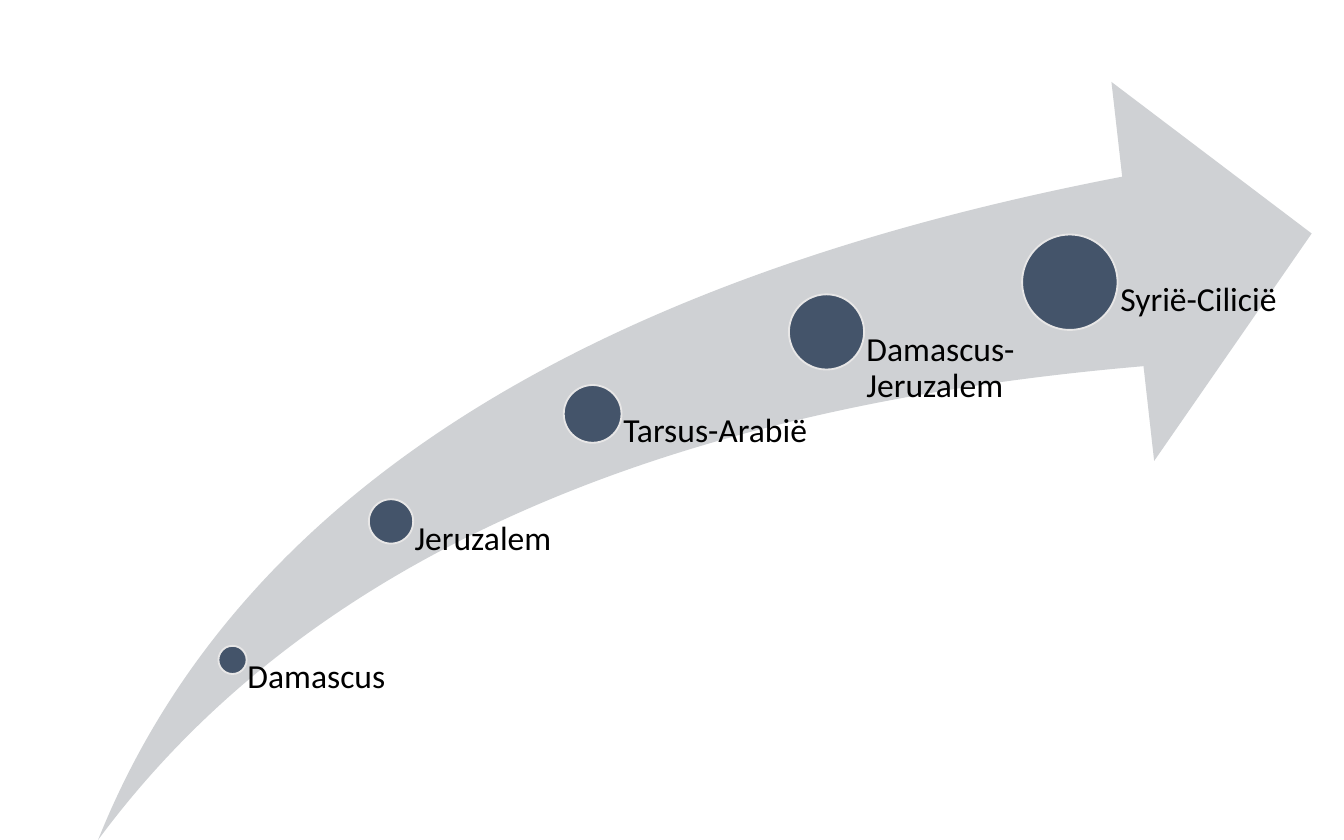
"""Build the slide of an upward journey arrow with five growing stops."""
from pptx import Presentation
from pptx import util as u
from pptx.dml import color
from pptx.enum import shapes, text

COLORS = {"arrow": "CFD1D4", "stop": "44546A", "rim": "E7E6E6", "label": "000000"}
LABEL_FRAME = {
    "word_wrap": True,
    "auto_size": text.MSO_AUTO_SIZE.NONE,
    "vertical_anchor": text.MSO_ANCHOR.TOP,
    "margin_top": 0,
    "margin_right": 0,
    "margin_bottom": 0,
}
LABEL_PARAGRAPH = {"alignment": text.PP_ALIGN.LEFT, "line_spacing": 0.9}
LABEL_FONT = {"name": "Calibri", "size": u.Pt(18)}
INSET_RATIO = 0.53
STOPS = [
    ("Damascus", 1.0, 4.3, 0.21, 1.18),
    ("Jeruzalem", 2.18, 3.27, 0.33, 1.5),
    ("Tarsus-Arabië", 3.68, 2.47, 0.43, 1.74),
    ("Damascus-Jeruzalem", 5.42, 1.86, 0.56, 1.81),
    ("Syrië-Cilicië", 7.23, 1.49, 0.71, 1.81),
]


def apply(target, values):
    """Set each named attribute on the target."""
    for name, value in values.items():
        setattr(target, name, value)


def rgb(name):
    """Return the named palette colour."""
    return color.RGBColor.from_string(COLORS[name])


def add_filled(group, preset, box, fill):
    """Add a flat preset shape in the given box, in inches."""
    shape = group.shapes.add_shape(preset, *map(u.Inches, box))
    shape.shadow.inherit = False
    shape.fill.solid()
    shape.fill.fore_color.rgb = rgb(fill)
    return shape


def add_arrow(group, box):
    """Fill the box with the rising arrow."""
    arrow = add_filled(group, shapes.MSO_SHAPE.SWOOSH_ARROW, box, "arrow")
    arrow.adjustments[0] = arrow.adjustments[1] = 0.25
    arrow.line.fill.background()


def add_stop(group, box, place, across, down, size, width):
    """Add a dot and a label that runs from its centre to the box bottom."""
    left, top, _, height = box
    center_x, center_y = left + across, top + down
    dot_box = (center_x - size / 2, center_y - size / 2, size, size)
    dot = add_filled(group, shapes.MSO_SHAPE.OVAL, dot_box, "stop")
    dot.line.color.rgb = rgb("rim")
    dot.line.width = u.Pt(1)

    label_box = (center_x, center_y, width, height - down)
    label = group.shapes.add_textbox(*map(u.Inches, label_box))
    frame = label.text_frame
    apply(frame, LABEL_FRAME)
    frame.margin_left = u.Inches(size * INSET_RATIO)
    paragraph = frame.paragraphs[0]
    apply(paragraph, LABEL_PARAGRAPH)
    run = paragraph.add_run()
    run.text = place
    apply(run.font, LABEL_FONT)
    run.font.color.rgb = rgb("label")


def add_journey(slide, box):
    """Place the arrow and its stops as one group in the box."""
    journey = slide.shapes.add_group_shape()
    add_arrow(journey, box)
    for stop in STOPS:
        add_stop(journey, box, *stop)


def main():
    """Build and save the presentation."""
    deck = Presentation()
    deck.slide_width, deck.slide_height = u.Inches(10), u.Inches(6.25)
    slide = deck.slides.add_slide(deck.slide_layouts[6])
    add_journey(slide, (0.73, 0.61, 9.03, 5.64))
    deck.save("out.pptx")


if __name__ == "__main__":
    main()
